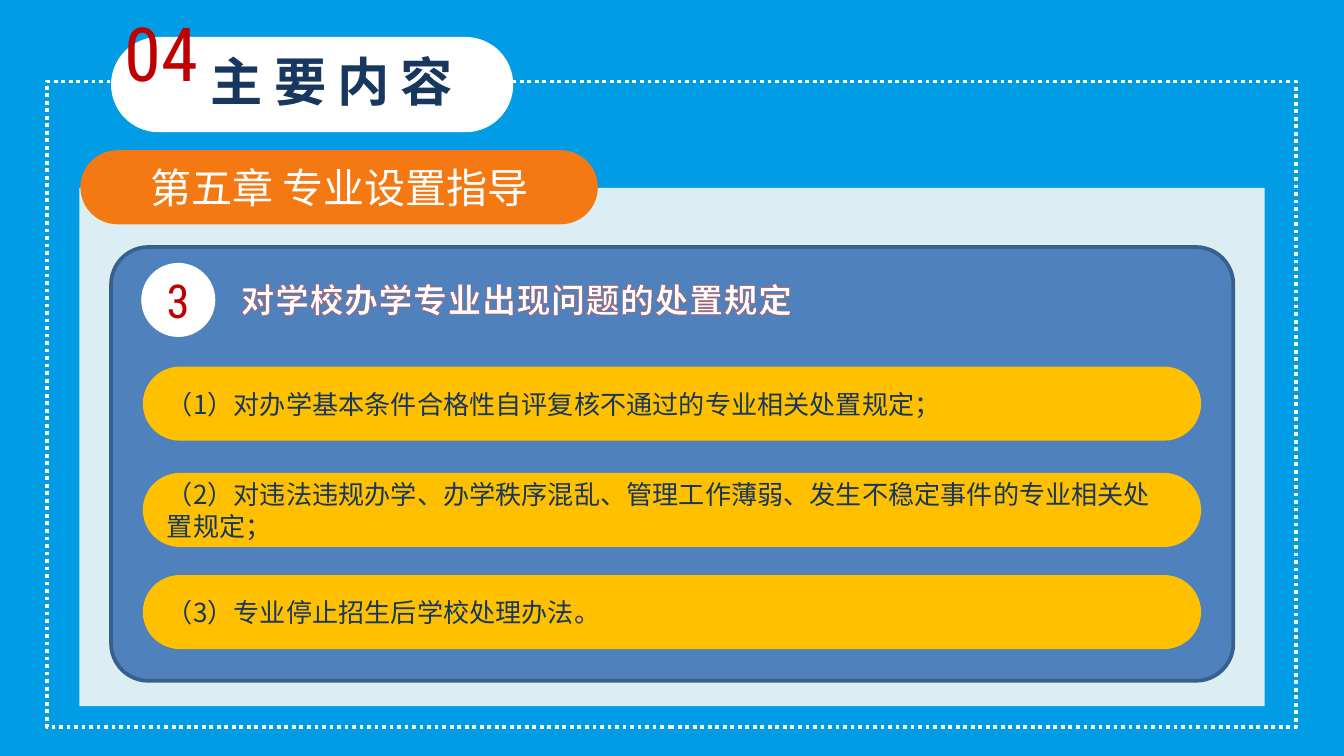
from lxml.etree import SubElement
from pptx import Presentation
from pptx.dml.color import RGBColor
from pptx.enum.dml import MSO_LINE
from pptx.enum.shapes import MSO_SHAPE
from pptx.enum.text import MSO_ANCHOR, PP_ALIGN
from pptx.oxml.ns import qn
from pptx.util import Cm, Pt

NUMBER = "04"
TITLE = "主要内容"
CHAPTER = "第五章 专业设置指导"
SECTION_NUMBER = "3"
SECTION = "对学校办学专业出现问题的处置规定"
RULES = [
    (6.93, "（1）对办学基本条件合格性自评复核不通过的专业相关处置规定；"),
    (8.94, "（2）对违法违规办学、办学秩序混乱、管理工作薄弱、发生不稳定事件的专业相关处置规定；"),
    (10.87, "（3）专业停止招生后学校处理办法。"),
]
COLORS = {
    "sky": "009CE5",
    "white": "FFFFFF",
    "red": "C00000",
    "navy": "17375E",
    "pale": "DBEEF4",
    "orange": "F57913",
    "blue": "4F81BD",
    "edge": "3A5F8C",
    "yellow": "FFC000",
    "brick": "C0504D",
}
CHINESE = "Noto Sans CJK SC"
DIGITS = "Roboto Condensed"
BAR_HEIGHT = 1.4


def color(name):
    return RGBColor.from_string(COLORS[name])


def add_shape(page, kind, place, fill=None, line=None, corner=None):
    shape = page.shapes.add_shape(kind, *map(Cm, place))
    shape.shadow.inherit = False
    if corner is not None:
        shape.adjustments[0] = corner
    if fill:
        shape.fill.solid()
        shape.fill.fore_color.rgb = color(fill)
    else:
        shape.fill.background()
    if line:
        shape.line.color.rgb = color(line)
        shape.line.width = Pt(2)
    else:
        shape.line.fill.background()
    return shape


def add_pill(page, place, fill):
    return add_shape(page, MSO_SHAPE.ROUNDED_RECTANGLE, place, fill, corner=0.5)


def write(shape, text, size, ink, face=CHINESE, bold=False, align=PP_ALIGN.LEFT,
          anchor=MSO_ANCHOR.MIDDLE, wrap=True, spacing=0, outline=None):
    frame = shape.text_frame
    frame.word_wrap = wrap
    frame.vertical_anchor = anchor
    paragraph = frame.paragraphs[0]
    paragraph.alignment = align
    span = paragraph.add_run()
    span.text = text
    font = span.font
    font.size = Pt(size)
    font.bold = bold
    font.name = face
    font.color.rgb = color(ink)
    properties = span._r.get_or_add_rPr()
    SubElement(properties, qn("a:ea")).set("typeface", face)
    if spacing:
        properties.set("spc", str(int(spacing * 100)))
    if outline:
        name, width = outline
        line = SubElement(properties, qn("a:ln"), w=str(Pt(width)))
        fill = SubElement(line, qn("a:solidFill"))
        SubElement(fill, qn("a:srgbClr"), val=COLORS[name])
        properties.insert(0, line)


def add_label(page, place, text, size, ink, **style):
    box = page.shapes.add_textbox(*map(Cm, place))
    write(box, text, size, ink, anchor=MSO_ANCHOR.TOP, **style)


def place_title(page):
    title = page.shapes.title
    title.left, title.top, title.width, title.height = map(Cm, (3.73, 0.81, 5.51, 1.45))
    write(title, TITLE, 28, "navy", bold=True, anchor=MSO_ANCHOR.TOP, spacing=6)
    title.element.getparent().append(title.element)


def main():
    deck = Presentation()
    deck.slide_width, deck.slide_height = Cm(25.4), Cm(14.29)
    page = deck.slides.add_slide(deck.slide_layouts[5])
    page.background.fill.solid()
    page.background.fill.fore_color.rgb = color("sky")

    border = add_shape(page, MSO_SHAPE.RECTANGLE, (0.89, 1.54, 23.6, 12.21), line="white")
    border.line.dash_style = MSO_LINE.ROUND_DOT
    add_pill(page, (2.1, 0.7, 7.6, 1.8), "white")
    add_label(page, (2.1, 0, 1.98, 1.96), NUMBER, 40, "red", face=DIGITS,
              wrap=False, outline=("white", 2.25))
    place_title(page)

    add_shape(page, MSO_SHAPE.RECTANGLE, (1.5, 3.55, 22.4, 9.8), "pale")
    chapter = add_pill(page, (1.52, 2.84, 9.78, BAR_HEIGHT), "orange")
    write(chapter, CHAPTER, 22, "white", align=PP_ALIGN.CENTER)
    add_shape(page, MSO_SHAPE.ROUNDED_RECTANGLE, (2.1, 4.67, 21.21, 8.2),
              "blue", "edge", 0.086)

    for top, text in RULES:
        bar = add_pill(page, (2.7, top, 20, BAR_HEIGHT), "yellow")
        write(bar, text, 14, "navy")

    badge = add_shape(page, MSO_SHAPE.OVAL, (2.67, 4.97, BAR_HEIGHT, BAR_HEIGHT), "white")
    write(badge, SECTION_NUMBER, 25, "red", face=DIGITS, align=PP_ALIGN.CENTER)
    add_label(page, (4.3, 5.15, 11.05, 1.02), SECTION, 18, "white", bold=True,
              wrap=False, spacing=0.5, outline=("brick", 0.52))

    deck.save("out.pptx")


if __name__ == "__main__":
    main()
